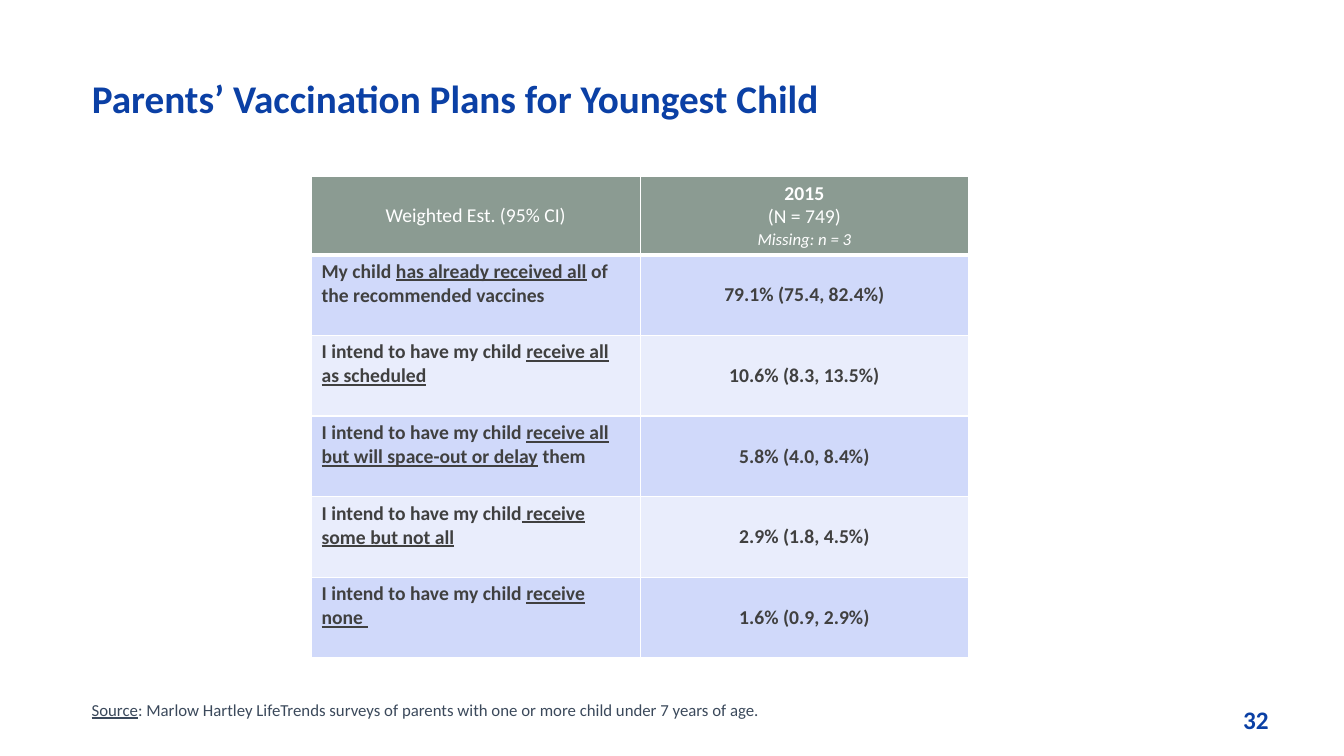
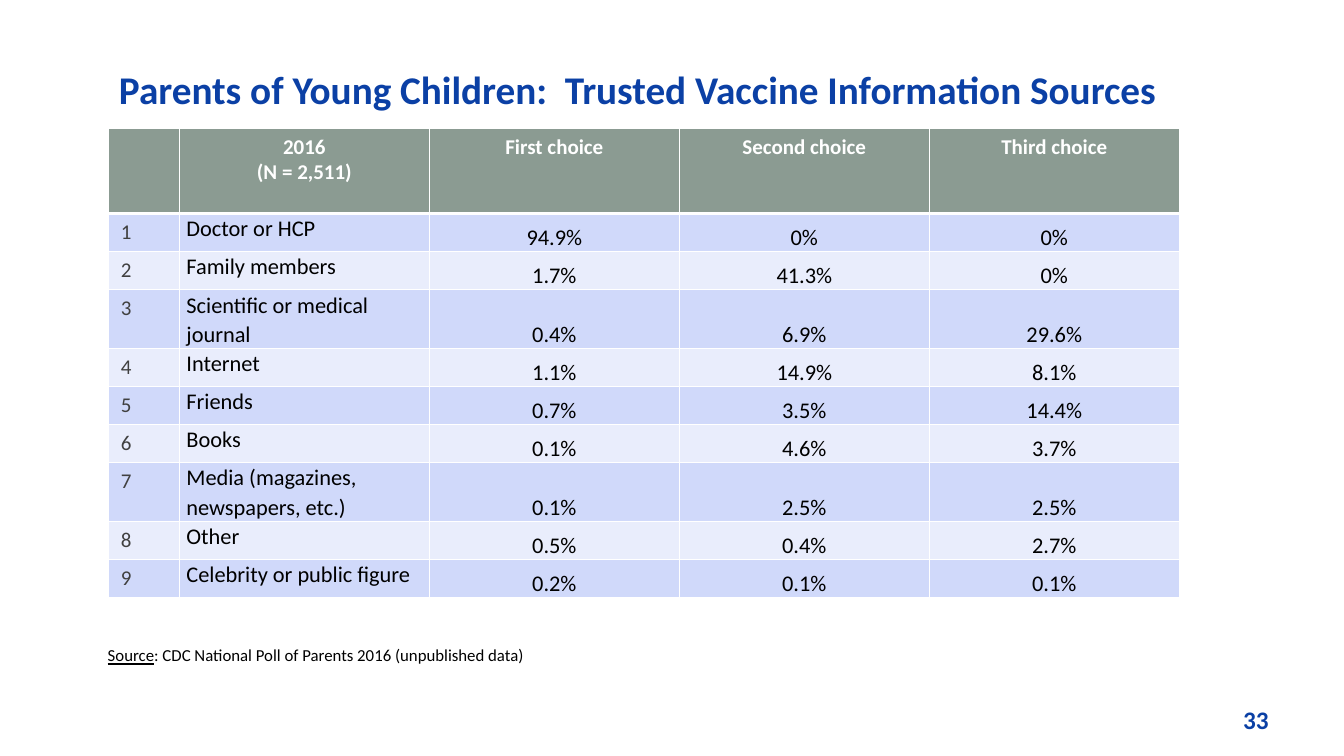
from dataclasses import dataclass, replace
from typing import Optional, Union

from lxml.etree import SubElement
from pptx import Presentation
from pptx.dml.color import RGBColor
from pptx.enum.text import MSO_ANCHOR, MSO_AUTO_SIZE, PP_ALIGN
from pptx.oxml.ns import qn
from pptx.util import Inches, Pt

SLIDE_WIDTH = Inches(13.33)
SLIDE_HEIGHT = Inches(7.5)
GRID_COLUMNS = 100
GRID_ROWS = 100

FONT = "Calibri"
BLUE = RGBColor(0x0B, 0x40, 0xA5)
SAGE = RGBColor(0x8B, 0x9B, 0x92)
DARK_BAND = RGBColor(0xD0, 0xD9, 0xFA)
LIGHT_BAND = RGBColor(0xE9, 0xED, 0xFC)
CHARCOAL = RGBColor(0x40, 0x40, 0x40)
SLATE = RGBColor(0x3B, 0x49, 0x5B)
WHITE = RGBColor(0xFF, 0xFF, 0xFF)
BLACK = RGBColor(0x00, 0x00, 0x00)


@dataclass(frozen=True)
class Style:
    size: float
    color: RGBColor
    bold: bool = False
    italic: bool = False


@dataclass(frozen=True)
class Span:
    text: str
    style: Style
    underline: bool = False


@dataclass(frozen=True)
class Para:
    spans: tuple[Span, ...]
    align: PP_ALIGN = PP_ALIGN.LEFT
    line_spacing: Optional[Union[float, Pt]] = None
    hanging: bool = False


@dataclass(frozen=True)
class CellText:
    paras: tuple[Para, ...] = ()
    anchor: MSO_ANCHOR = MSO_ANCHOR.TOP
    inset: tuple[float, float] = (0.1, 0.05)


@dataclass(frozen=True)
class Area:
    left: float
    top: float
    width: float
    height: float

    def lengths(self) -> tuple[int, int, int, int]:
        return across(self.left), down(self.top), across(self.width), down(self.height)


@dataclass(frozen=True)
class TablePage:
    title: str
    title_area: Area
    title_spacing: Optional[Pt]
    table_left: float
    table_top: float
    columns: tuple[float, ...]
    rows: tuple[float, ...]
    cells: list[list[CellText]]
    source: str
    source_area: Area
    source_color: RGBColor
    source_spacing: Optional[Pt]
    number: str


TITLE = Style(28, BLUE, bold=True)
PAGE_NUMBER = Style(18, BLUE, bold=True)
PAGE_NUMBER_AREA = Area(91.75, 92.53, 7.5, 5.33)
HEADING = Style(14, WHITE)
PLAN = Style(14, CHARCOAL, bold=True)
CHOICE_HEADING = Style(15, WHITE, bold=True)
RANK = Style(15, CHARCOAL)
CHOICE = Style(16, BLACK)
WIDE_INSET = (0.12, 0.06)
TIGHT_INSET = (0.07, 0)

PLANS = [
    (("My child ", "has already received all", " of the recommended vaccines"), "79.1% (75.4, 82.4%)"),
    (("I intend to have my child ", "receive all as scheduled"), "10.6% (8.3, 13.5%)"),
    (("I intend to have my child ", "receive all but will space-out or delay", " them"), "5.8% (4.0, 8.4%)"),
    (("I intend to have my child", " receive some but not all"), "2.9% (1.8, 4.5%)"),
    (("I intend to have my child ", "receive none "), "1.6% (0.9, 2.9%)"),
]

CHOICES = [
    ("Doctor or HCP", "94.9%", "0%", "0%"),
    ("Family members", "1.7%", "41.3%", "0%"),
    ("Scientific or medical journal", "0.4%", "6.9%", "29.6%"),
    ("Internet", "1.1%", "14.9%", "8.1%"),
    ("Friends", "0.7%", "3.5%", "14.4%"),
    ("Books", "0.1%", "4.6%", "3.7%"),
    ("Media (magazines, newspapers, etc.)", "0.1%", "2.5%", "2.5%"),
    ("Other", "0.5%", "0.4%", "2.7%"),
    ("Celebrity or public figure", "0.2%", "0.1%", "0.1%"),
]


def across(columns: float) -> int:
    return round(SLIDE_WIDTH * columns / GRID_COLUMNS)


def down(rows: float) -> int:
    return round(SLIDE_HEIGHT * rows / GRID_ROWS)


def centred(text: str, style: Style, line_spacing: Optional[float] = None) -> Para:
    return Para((Span(text, style),), PP_ALIGN.CENTER, line_spacing)


def plan_cells() -> list[list[CellText]]:
    heading = [
        CellText((centred("Weighted Est. (95% CI)", HEADING),), MSO_ANCHOR.MIDDLE),
        CellText((
            centred("2015", replace(HEADING, bold=True)),
            centred("(N = 749)", HEADING),
            centred("Missing: n = 3", replace(HEADING, size=12, italic=True)),
        )),
    ]
    body = [
        [
            CellText((Para(tuple(Span(part, PLAN, index == 1) for index, part in enumerate(parts))),)),
            CellText((centred(estimate, PLAN),), MSO_ANCHOR.MIDDLE),
        ]
        for parts, estimate in PLANS
    ]
    return [heading, *body]


def choice_cells() -> list[list[CellText]]:
    headings = [(), ("2016", "(N = 2,511)"), ("First choice",), ("Second choice",), ("Third choice",)]
    heading = [
        CellText(tuple(centred(line, CHOICE_HEADING) for line in lines), inset=WIDE_INSET)
        for lines in headings
    ]
    body = [
        [
            CellText((Para((Span(str(rank), RANK),)),), inset=WIDE_INSET),
            CellText((Para((Span(name, CHOICE),), line_spacing=1.07),), inset=TIGHT_INSET),
            *(
                CellText((centred(share, CHOICE, 1.07),), MSO_ANCHOR.BOTTOM, TIGHT_INSET)
                for share in shares
            ),
        ]
        for rank, (name, *shares) in enumerate(CHOICES, start=1)
    ]
    return [heading, *body]


def write_paras(frame, paras: tuple[Para, ...]) -> None:
    for index, para in enumerate(paras):
        paragraph = frame.add_paragraph() if index else frame.paragraphs[0]
        paragraph.alignment = para.align
        if para.line_spacing is not None:
            paragraph.line_spacing = para.line_spacing
        if para.hanging:
            properties = paragraph._p.get_or_add_pPr()
            properties.set("marL", str(Inches(0.27)))
            properties.set("indent", str(-Inches(0.27)))
        for span in para.spans:
            run = paragraph.add_run()
            run.text = span.text
            run.font.name = FONT
            run.font.size = Pt(span.style.size)
            run.font.color.rgb = span.style.color
            run.font.bold = span.style.bold
            run.font.italic = span.style.italic
            run.font.underline = span.underline


def add_text(page, area: Area, para: Para, anchor: MSO_ANCHOR) -> None:
    frame = page.shapes.add_textbox(*area.lengths()).text_frame
    frame.word_wrap = True
    frame.vertical_anchor = anchor
    write_paras(frame, (para,))


def add_title(page, plan: TablePage) -> None:
    title = page.shapes.title
    title.left, title.top, title.width, title.height = plan.title_area.lengths()
    frame = title.text_frame
    frame.word_wrap = True
    frame.auto_size = MSO_AUTO_SIZE.NONE
    frame.vertical_anchor = MSO_ANCHOR.BOTTOM
    write_paras(frame, (Para((Span(plan.title, TITLE),), line_spacing=plan.title_spacing),))


def add_borders(cell, row: int) -> None:
    properties = cell._tc.get_or_add_tcPr()
    widths = {"a:lnL": 1, "a:lnR": 1, "a:lnT": 3 if row == 1 else 1, "a:lnB": 3 if row == 0 else 1}
    for tag, width in widths.items():
        line = SubElement(properties, qn(tag), w=str(Pt(width)))
        fill = SubElement(line, qn("a:solidFill"))
        SubElement(fill, qn("a:srgbClr"), val=str(WHITE))


def format_cell(cell, content: CellText, row: int) -> None:
    add_borders(cell, row)
    cell.fill.solid()
    cell.fill.fore_color.rgb = SAGE if row == 0 else DARK_BAND if row % 2 else LIGHT_BAND
    cell.vertical_anchor = content.anchor
    side, edge = content.inset
    cell.margin_left = cell.margin_right = Inches(side)
    cell.margin_top = cell.margin_bottom = Inches(edge)
    write_paras(cell.text_frame, content.paras)


def add_grid(page, plan: TablePage) -> None:
    area = Area(plan.table_left, plan.table_top, sum(plan.columns), sum(plan.rows))
    table = page.shapes.add_table(len(plan.rows), len(plan.columns), *area.lengths()).table
    for column, width in zip(table.columns, plan.columns):
        column.width = across(width)
    for row, height in zip(table.rows, plan.rows):
        row.height = down(height)
    for row, contents in enumerate(plan.cells):
        for column, content in enumerate(contents):
            format_cell(table.cell(row, column), content, row)


def add_page(deck, plan: TablePage) -> None:
    page = deck.slides.add_slide(deck.slide_layouts[5])
    add_title(page, plan)
    add_grid(page, plan)
    style = Style(12, plan.source_color)
    source = Para(
        (Span("Source", style, underline=True), Span(plan.source, style)),
        line_spacing=plan.source_spacing,
        hanging=True,
    )
    add_text(page, plan.source_area, source, MSO_ANCHOR.BOTTOM)
    add_text(page, PAGE_NUMBER_AREA, Para((Span(plan.number, PAGE_NUMBER),)), MSO_ANCHOR.TOP)


def main() -> None:
    deck = Presentation()
    deck.slide_width = SLIDE_WIDTH
    deck.slide_height = SLIDE_HEIGHT
    add_page(deck, TablePage(
        title="Parents’ Vaccination Plans for Youngest Child",
        title_area=Area(6.08, 0, 90, 16.67),
        title_spacing=Pt(30),
        table_left=23.18,
        table_top=23.33,
        columns=(24.45,) * 2,
        rows=(10.27,) + (10.67,) * len(PLANS),
        cells=plan_cells(),
        source=": Marlow Hartley LifeTrends surveys of parents with one or more child under 7 years of age.",
        source_area=Area(6.08, 86.93, 90, 8.93),
        source_color=SLATE,
        source_spacing=Pt(11),
        number="32",
    ))
    add_page(deck, TablePage(
        title="Parents of Young Children:  Trusted Vaccine Information Sources",
        title_area=Area(8.1, 0, 80, 15.47),
        title_spacing=None,
        table_left=8.1,
        table_top=16.93,
        columns=(5.25,) + (18.6,) * 4,
        rows=(11.33,) + tuple(7.74 if len(choice[0]) > 26 else 5.04 for choice in CHOICES),
        cells=choice_cells(),
        source=": CDC National Poll of Parents 2016 (unpublished data)",
        source_area=Area(7.28, 79.73, 90, 8.93),
        source_color=BLACK,
        source_spacing=None,
        number="33",
    ))
    deck.save("out.pptx")


if __name__ == "__main__":
    main()
